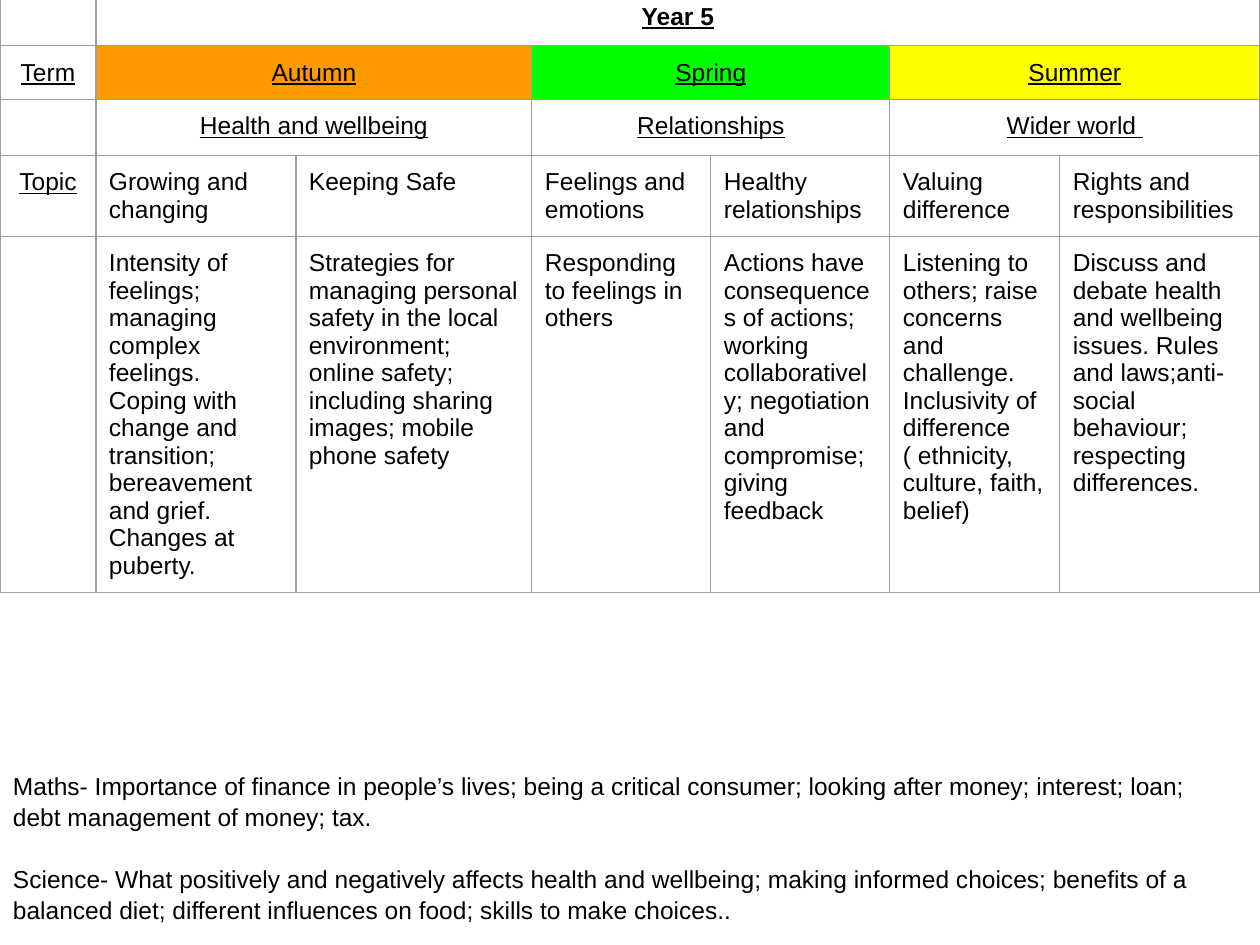
from lxml import etree
from pptx import Presentation
from pptx.dml.color import RGBColor
from pptx.enum.text import PP_ALIGN
from pptx.oxml.ns import qn
from pptx.util import Emu, Pt

CENTER, LEFT = PP_ALIGN.CENTER, PP_ALIGN.LEFT
SCALE = 914400 / 126
FONT, SIZE = "Arial", 14
MARGIN = 13
COLORS = {
    "text": "000000",
    "border": "9E9E9E",
    "Autumn": "FF9900",
    "Spring": "00FF00",
    "Summer": "FFFF00",
}
COLS = [96, 200, 236, 179, 179, 170, 200]
ROWS = [52, 53, 53, 80, 355]
HEADINGS = [
    (0, 1, 6, "Year 5"),
    (1, 0, 1, "Term"),
    (1, 1, 2, "Autumn"),
    (1, 3, 2, "Spring"),
    (1, 5, 2, "Summer"),
    (2, 1, 2, "Health and wellbeing"),
    (2, 3, 2, "Relationships"),
    (2, 5, 2, "Wider world "),
    (3, 0, 1, "Topic"),
]
TOPICS = [
    ("Growing and changing",
     "Intensity of feelings; managing complex feelings. Coping with change and "
     "transition; bereavement and grief. Changes at puberty."),
    ("Keeping Safe",
     "Strategies for managing personal safety in the local environment; online "
     "safety; including sharing images; mobile phone safety"),
    ("Feelings and emotions", "Responding to feelings in others"),
    ("Healthy relationships",
     "Actions have consequences of actions; working collaboratively; "
     "negotiation and compromise; giving feedback"),
    ("Valuing difference",
     "Listening to others; raise concerns and challenge. Inclusivity of "
     "difference ( ethnicity, culture, faith, belief)"),
    ("Rights and responsibilities",
     "Discuss and debate health and wellbeing issues. Rules and laws;anti-social "
     "behaviour; respecting differences."),
]
NOTES = [
    "Maths- Importance of finance in people’s lives; being a critical consumer; "
    "looking after money; interest; loan; debt management of money; tax.",
    "Science- What positively and negatively affects health and wellbeing; making "
    "informed choices; benefits of a balanced diet; different influences on food; "
    "skills to make choices..",
]


def px(n):
    return Emu(round(n * SCALE))


def rgb(name):
    return RGBColor.from_string(COLORS[name])


def set_margins(box):
    box.margin_left = box.margin_right = px(MARGIN)
    box.margin_top = box.margin_bottom = px(MARGIN)


def write(p, text, align=LEFT, bold=False, underline=False):
    p.text = text
    p.alignment = align
    f = p.font
    f.name, f.size = FONT, Pt(SIZE)
    f.bold, f.underline = bold, underline
    f.color.rgb = rgb("text")


def prepare_cell(cell):
    set_margins(cell)
    tcPr = cell._tc.get_or_add_tcPr()
    for side in ("lnL", "lnR", "lnT", "lnB"):
        ln = etree.SubElement(tcPr, qn(f"a:{side}"), w=str(Pt(0.75)))
        fill = etree.SubElement(ln, qn("a:solidFill"))
        etree.SubElement(fill, qn("a:srgbClr"), val=COLORS["border"])
    cell.fill.background()
    p = cell.text_frame.paragraphs[0]
    etree.SubElement(p._p, qn("a:endParaRPr"), sz=str(SIZE * 100))


def add_plan(s):
    frame = s.shapes.add_table(len(ROWS), len(COLS), px(0), px(-10),
                               px(sum(COLS)), px(sum(ROWS)))
    table = frame.table
    table.first_row = table.horz_banding = False
    for col, width in zip(table.columns, COLS):
        col.width = px(width)
    for row, height in zip(table.rows, ROWS):
        row.height = px(height)
    for cell in table.iter_cells():
        prepare_cell(cell)
    for r, c, span, text in HEADINGS:
        cell = table.cell(r, c)
        if span > 1:
            cell.merge(table.cell(r, c + span - 1))
        write(cell.text_frame.paragraphs[0], text, CENTER, r == 0, True)
        if text in COLORS:
            cell.fill.solid()
            cell.fill.fore_color.rgb = rgb(text)
    for c, topic in enumerate(TOPICS, 1):
        for r, text in enumerate(topic, 3):
            write(table.cell(r, c).text_frame.paragraphs[0], text)


def add_notes(s):
    tf = s.shapes.add_textbox(px(0), px(756), px(1222), px(179)).text_frame
    tf.word_wrap = True
    set_margins(tf)
    for i, text in enumerate(NOTES):
        p = tf.add_paragraph() if i else tf.paragraphs[0]
        write(p, text)
        p.line_spacing = 1.07
        p.space_before = Pt(17 if i else 0)


def main():
    prs = Presentation()
    prs.slide_width, prs.slide_height = px(1260), px(945)
    s = prs.slides.add_slide(prs.slide_layouts[6])
    add_plan(s)
    add_notes(s)
    prs.save("out.pptx")


if __name__ == "__main__":
    main()
